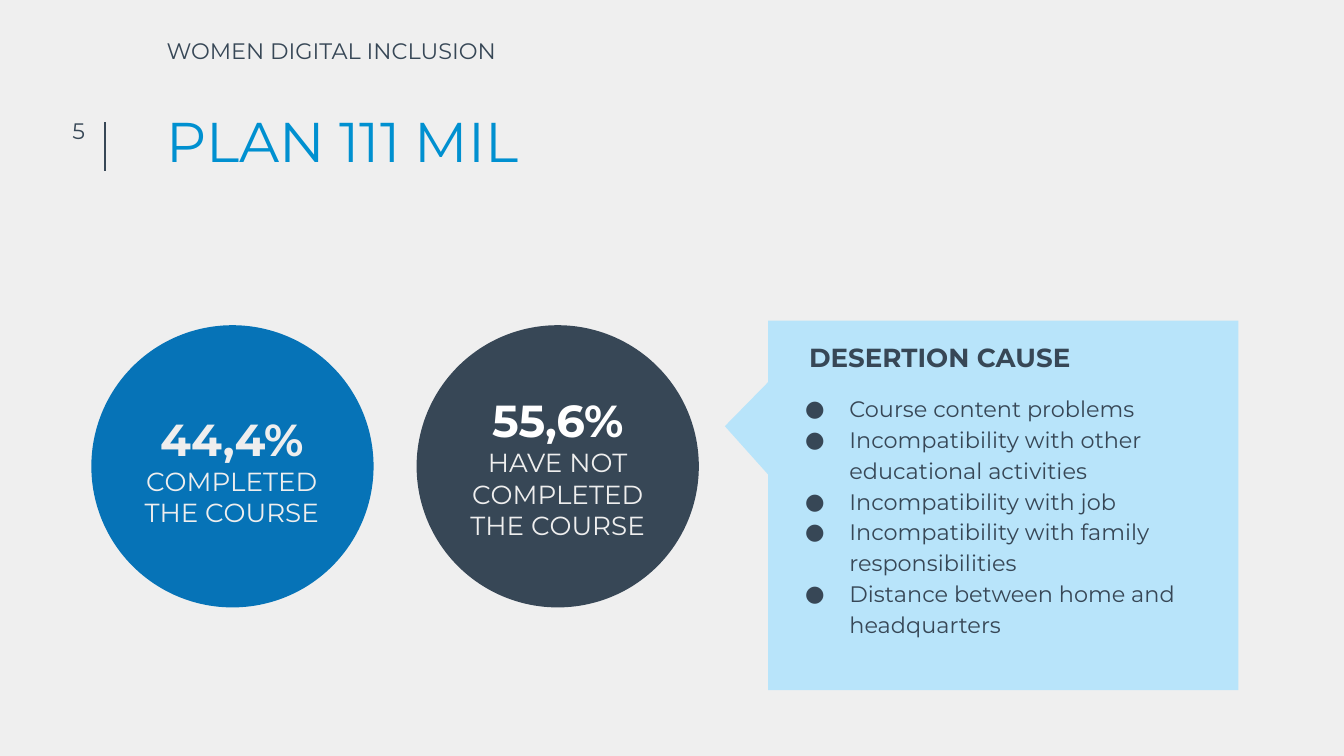
from lxml.etree import SubElement
from pptx import Presentation
from pptx.dml.color import RGBColor
from pptx.enum.shapes import MSO_CONNECTOR, MSO_SHAPE
from pptx.enum.text import MSO_ANCHOR, PP_ALIGN
from pptx.oxml.ns import qn
from pptx.util import Inches, Pt

PAPER = RGBColor(0xEF, 0xEF, 0xEF)
SLATE = RGBColor(0x37, 0x47, 0x56)
BLUE = RGBColor(0x06, 0x73, 0xB7)
BRIGHT_BLUE = RGBColor(0x00, 0x90, 0xD0)
PALE_BLUE = RGBColor(0xB8, 0xE4, 0xFA)
PALE_GREY = RGBColor(0xEE, 0xEE, 0xEE)
WHITE = RGBColor(0xFF, 0xFF, 0xFF)
FONT = "Montserrat"

# Content
SECTION = "WOMEN DIGITAL INCLUSION"
TITLE = "PLAN 111 MIL"
PAGE_NUMBER = "5"
CAUSE_HEADING = "DESERTION CAUSE"
CAUSES = [
    "Course content problems",
    "Incompatibility with other educational activities",
    "Incompatibility with job",
    "Incompatibility with family responsibilities",
    "Distance between home and headquarters",
]
# Circle left, fill, text box, share, share colour, label lines
RESULTS = [
    (3.1, SLATE, (3.1, 3.07, 2.1, 0.75), "55,6%", WHITE,
     ["HAVE NOT COMPLETED", "THE COURSE"]),
    (0.68, BLUE, (0.36, 3.09, 2.73, 0.75), "44,4%", PALE_GREY,
     ["COMPLETED", "THE COURSE"]),
]
CIRCLE_TOP, CIRCLE_SIZE = 2.42, 2.1

# Text formats
SMALL = {"size": Pt(12), "color": SLATE}
HEADLINE = {"size": Pt(30), "color": BRIGHT_BLUE}
HEADING = {"size": Pt(14), "color": SLATE, "bold": True}
LABEL = {"size": Pt(14), "color": PALE_GREY}
SPACED = {"line_spacing": 1.15}
CENTERED = {"alignment": PP_ALIGN.CENTER}


def add_shape(page, kind, place, fill):
    shape = page.shapes.add_shape(kind, *map(Inches, place))
    shape.shadow.inherit = False
    shape.fill.solid()
    shape.fill.fore_color.rgb = fill
    shape.line.fill.background()
    return shape


def add_text(page, place, paragraphs, inset=0.05, anchor=MSO_ANCHOR.TOP):
    """Each paragraph is a tuple: text, font format, paragraph format."""
    box = page.shapes.add_textbox(*map(Inches, place))
    frame = box.text_frame
    frame.word_wrap = True
    frame.vertical_anchor = anchor
    for side in ("left", "top", "right", "bottom"):
        setattr(frame, f"margin_{side}", Inches(inset))
    for index, (text, font_format, para_format) in enumerate(paragraphs):
        para = frame.add_paragraph() if index else frame.paragraphs[0]
        for name, value in para_format.items():
            setattr(para, name, value)
        span = para.add_run()
        span.text = text
        span.font.name = FONT
        for name, value in font_format.items():
            if name == "color":
                span.font.color.rgb = value
            else:
                setattr(span.font, name, value)
    return frame


def add_bullet(para, color):
    properties = para._p.get_or_add_pPr()
    properties.set("marL", str(Inches(0.5)))
    properties.set("indent", str(Inches(-0.33)))
    bullet_color = SubElement(properties, qn("a:buClr"))
    SubElement(bullet_color, qn("a:srgbClr"), val=str(color))
    SubElement(properties, qn("a:buFont"), typeface=FONT)
    SubElement(properties, qn("a:buChar"), char="●")


# Widescreen 16:9 page
deck = Presentation()
deck.slide_width = Inches(10)
deck.slide_height = deck.slide_width * 9 // 16
page = deck.slides.add_slide(deck.slide_layouts[6])
page.background.fill.solid()
page.background.fill.fore_color.rgb = PAPER

# Header: section, title, page number and its rule
add_text(page, (1.19, 0.23, 4.01, 0.22), [(SECTION, SMALL, {})])
add_text(page, (1.19, 0.74, 7.52, 0.69), [(TITLE, HEADLINE, {})])
add_text(page, (0.24, 0.87, 0.49, 0.2),
         [(PAGE_NUMBER, SMALL, {"alignment": PP_ALIGN.RIGHT})],
         inset=0.1, anchor=MSO_ANCHOR.MIDDLE)
rule = page.shapes.add_connector(
    MSO_CONNECTOR.STRAIGHT, *map(Inches, (0.78, 0.91, 0.78, 1.27)))
rule.line.color.rgb = SLATE
rule.line.width = Pt(0.75)
SubElement(rule._element.spPr, qn("a:effectLst"))

# Result circles
for left, fill, text_place, share, share_color, lines in RESULTS:
    add_shape(page, MSO_SHAPE.OVAL,
              (left, CIRCLE_TOP, CIRCLE_SIZE, CIRCLE_SIZE), fill)
    share_format = {"size": Pt(24), "color": share_color, "bold": True}
    add_text(page, text_place,
             [(share, share_format, CENTERED | SPACED)]
             + [(line, LABEL, CENTERED) for line in lines],
             inset=0.1, anchor=MSO_ANCHOR.MIDDLE)

# Callout, turned so that its pointer faces the circles
callout = add_shape(page, MSO_SHAPE.RECTANGULAR_CALLOUT,
                    (6.09, 2.01, 2.75, 3.5), PALE_BLUE)
callout.rotation = 90
callout.adjustments[0] = -0.214
callout.adjustments[1] = 0.592

# Desertion causes
add_text(page, (5.97, 2.46, 2.9, 0.36), [(CAUSE_HEADING, HEADING, SPACED)])
causes = add_text(page, (5.77, 2.86, 3.49, 2.27),
                  [(cause, SMALL, SPACED) for cause in CAUSES])
for para in causes.paragraphs:
    add_bullet(para, SLATE)

deck.save("out.pptx")
